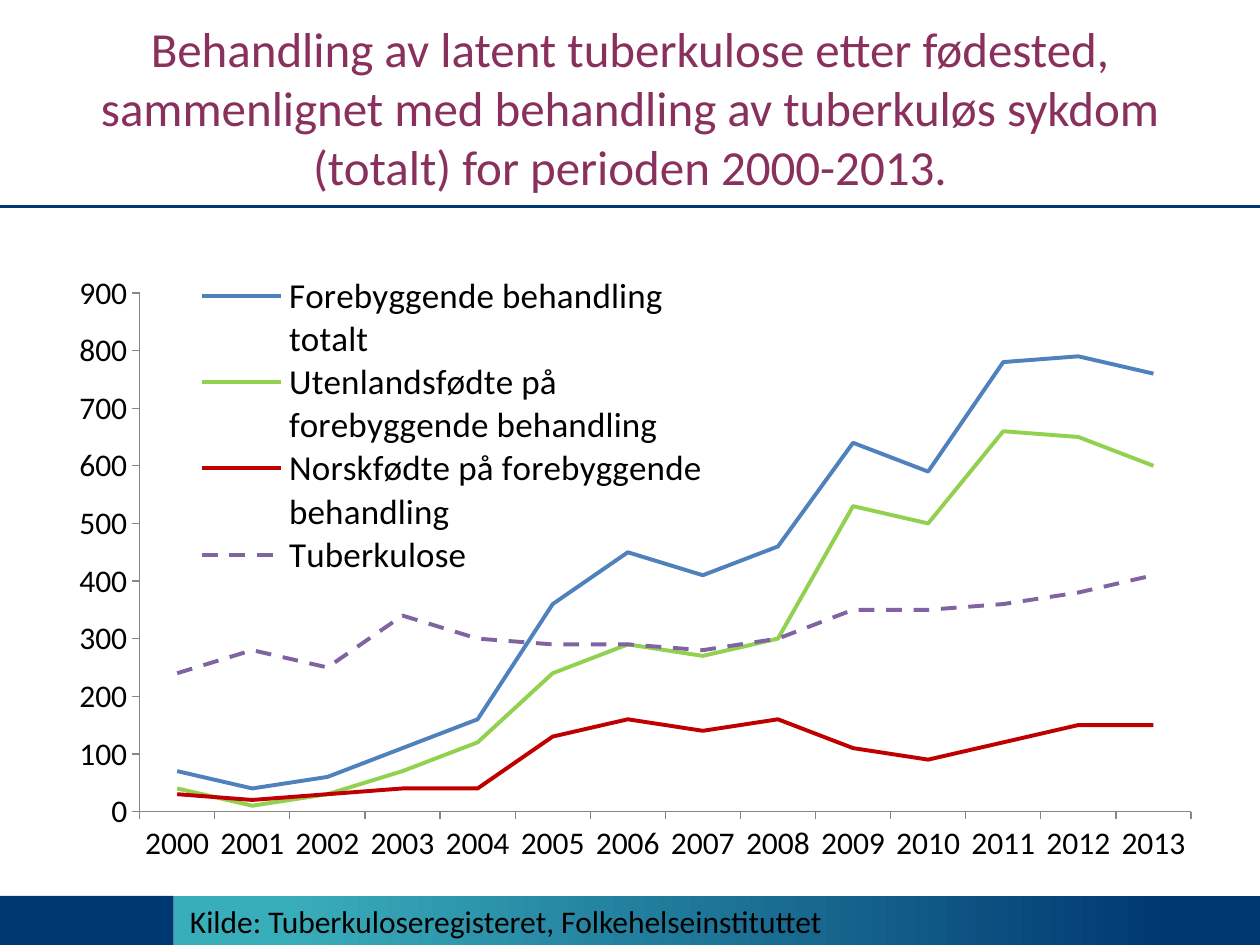
from lxml import etree
from pptx import Presentation
from pptx.chart.data import CategoryChartData
from pptx.dml.color import RGBColor
from pptx.enum.chart import XL_CHART_TYPE as ChartType, XL_LEGEND_POSITION as LegendPosition
from pptx.enum.chart import XL_MARKER_STYLE as Marker, XL_TICK_MARK as Tick
from pptx.enum.dml import MSO_LINE as Dash
from pptx.enum.shapes import MSO_CONNECTOR as Connector, MSO_SHAPE as Shape
from pptx.enum.text import MSO_ANCHOR as Anchor, PP_ALIGN as Align
from pptx.oxml import parse_xml
from pptx.oxml.ns import nsdecls, qn
from pptx.util import Cm, Pt

FONT = "Calibri"
BLACK = RGBColor(0x00, 0x00, 0x00)
PLUM = RGBColor(0x89, 0x30, 0x5D)
NAVY = RGBColor(0x00, 0x38, 0x71)
TEAL = RGBColor(0x39, 0xAE, 0xBB)
GREY = RGBColor(0x86, 0x86, 0x86)
BLUE = RGBColor(0x4F, 0x81, 0xBD)
GREEN = RGBColor(0x92, 0xD0, 0x50)
RED = RGBColor(0xC0, 0x00, 0x00)
PURPLE = RGBColor(0x80, 0x64, 0xA2)

# Content
TITLE = ("Behandling av latent tuberkulose etter fødested, sammenlignet med "
         "behandling av tuberkuløs sykdom (totalt) for perioden 2000-2013.")
SOURCE = "Kilde: Tuberkuloseregisteret, Folkehelseinstituttet"
YEARS = [str(year) for year in range(2000, 2014)]
SERIES = [  # name, colour, dash, values
    ("Forebyggende behandling totalt", BLUE, Dash.SOLID,
     (70, 40, 60, 110, 160, 360, 450, 410, 460, 640, 590, 780, 790, 760)),
    ("Utenlandsfødte på forebyggende behandling", GREEN, Dash.SOLID,
     (40, 10, 30, 70, 120, 240, 290, 270, 300, 530, 500, 660, 650, 600)),
    ("Norskfødte på forebyggende behandling", RED, Dash.SOLID,
     (30, 20, 30, 40, 40, 130, 160, 140, 160, 110, 90, 120, 150, 150)),
    ("Tuberkulose", PURPLE, Dash.DASH,
     (240, 280, 250, 340, 300, 290, 290, 280, 300, 350, 350, 360, 380, 410)),
]
PLOT_AREA = (0.066, 0.108, 0.905, 0.775)
LEGEND_AREA = (0.11, 0.08, 0.45, 0.45)

WIDTH, HEIGHT = Cm(25.4), Cm(19.05)
FOOTER_TOP, FOOTER_SPLIT = Cm(18.06), Cm(3.5)


def add_bar(page, left, right):
    bar = page.shapes.add_shape(Shape.RECTANGLE, left, FOOTER_TOP,
                                right - left, HEIGHT - FOOTER_TOP)
    bar.shadow.inherit = False
    bar.line.fill.background()
    return bar


def add_text(page, area, text, size, color, align, anchor):
    box = page.shapes.add_textbox(*area)
    frame = box.text_frame
    frame.word_wrap = True
    frame.vertical_anchor = anchor
    para = frame.paragraphs[0]
    para.alignment = align
    span = para.add_run()
    span.text = text
    set_font(span.font, size, color)


def set_font(font, size, color=BLACK):
    font.name = FONT
    font.size = Pt(size)
    font.color.rgb = color


def manual_layout(area, inner=False):
    """Chart layout element with fractions of the chart's size."""
    parts = [("layoutTarget", "inner")] if inner else []
    parts += [("xMode", "edge"), ("yMode", "edge"), *zip("xywh", area)]
    layout = parse_xml(f"<c:layout {nsdecls('c')}><c:manualLayout/></c:layout>")
    for name, value in parts:
        etree.SubElement(layout[0], qn(f"c:{name}")).set("val", str(value))
    return layout


def add_chart(page):
    data = CategoryChartData(number_format="General")
    data.categories = YEARS
    for name, _, _, values in SERIES:
        data.add_series(name, values)
    chart = page.shapes.add_chart(ChartType.LINE, Cm(1.27), Cm(4.45),
                                  Cm(23.42), Cm(13.49), data).chart
    set_font(chart.font, 18)
    chart.has_title = False

    # Lines
    plot = chart.plots[0]
    plot.vary_by_categories = False
    for series, (_, color, dash, _) in zip(plot.series, SERIES):
        series.smooth = False
        series.marker.style = Marker.NONE
        line = series.format.line
        line.width = Pt(2.25)
        line.color.rgb = color
        line.dash_style = dash

    # Axes
    for axis in (chart.category_axis, chart.value_axis):
        axis.has_major_gridlines = False
        axis.major_tick_mark = Tick.OUTSIDE
        axis.minor_tick_mark = Tick.NONE
        axis.format.line.color.rgb = GREY
        axis.format.line.width = Pt(0.75)
        set_font(axis.tick_labels.font, 18)
    values = chart.value_axis
    values.minimum_scale, values.maximum_scale, values.major_unit = 0, 900, 100

    # Legend over the plot
    chart.has_legend = True
    legend = chart.legend
    legend.position = LegendPosition.RIGHT
    legend.include_in_layout = False
    set_font(legend.font, 20)
    for old in legend._element.findall(qn("c:layout")):
        legend._element.remove(old)
    legend._element.find(qn("c:legendPos")).addnext(manual_layout(LEGEND_AREA))
    plot_area = chart._chartSpace.chart.plotArea
    for old in plot_area.findall(qn("c:layout")):
        plot_area.remove(old)
    plot_area.insert(0, manual_layout(PLOT_AREA, inner=True))


def main():
    deck = Presentation()
    deck.slide_width, deck.slide_height = WIDTH, HEIGHT
    page = deck.slides.add_slide(deck.slide_layouts[6])

    # Footer band
    fade = add_bar(page, FOOTER_SPLIT, WIDTH).fill
    fade.gradient()
    fade.gradient_angle = 0
    for stop, position, color in zip(fade.gradient_stops, (0.1, 0.92), (TEAL, NAVY)):
        stop.position = position
        stop.color.rgb = color
    corner = add_bar(page, 0, FOOTER_SPLIT).fill
    corner.solid()
    corner.fore_color.rgb = NAVY

    # Rule under the title
    rule = page.shapes.add_connector(Connector.STRAIGHT, 0, Cm(4.16), WIDTH, Cm(4.16))
    rule.line.color.rgb = NAVY
    rule.line.width = Pt(2)
    etree.SubElement(rule._element.spPr, qn("a:effectLst"))

    add_text(page, (Cm(1.27), Cm(0.56), Cm(22.86), Cm(3.18)), TITLE, 28, PLUM,
             Align.CENTER, Anchor.MIDDLE)
    add_chart(page)
    add_text(page, (Cm(3.58), FOOTER_TOP, Cm(15.65), Cm(1.02)), SOURCE, 18, BLACK,
             Align.LEFT, Anchor.TOP)
    deck.save("out.pptx")


if __name__ == "__main__":
    main()
